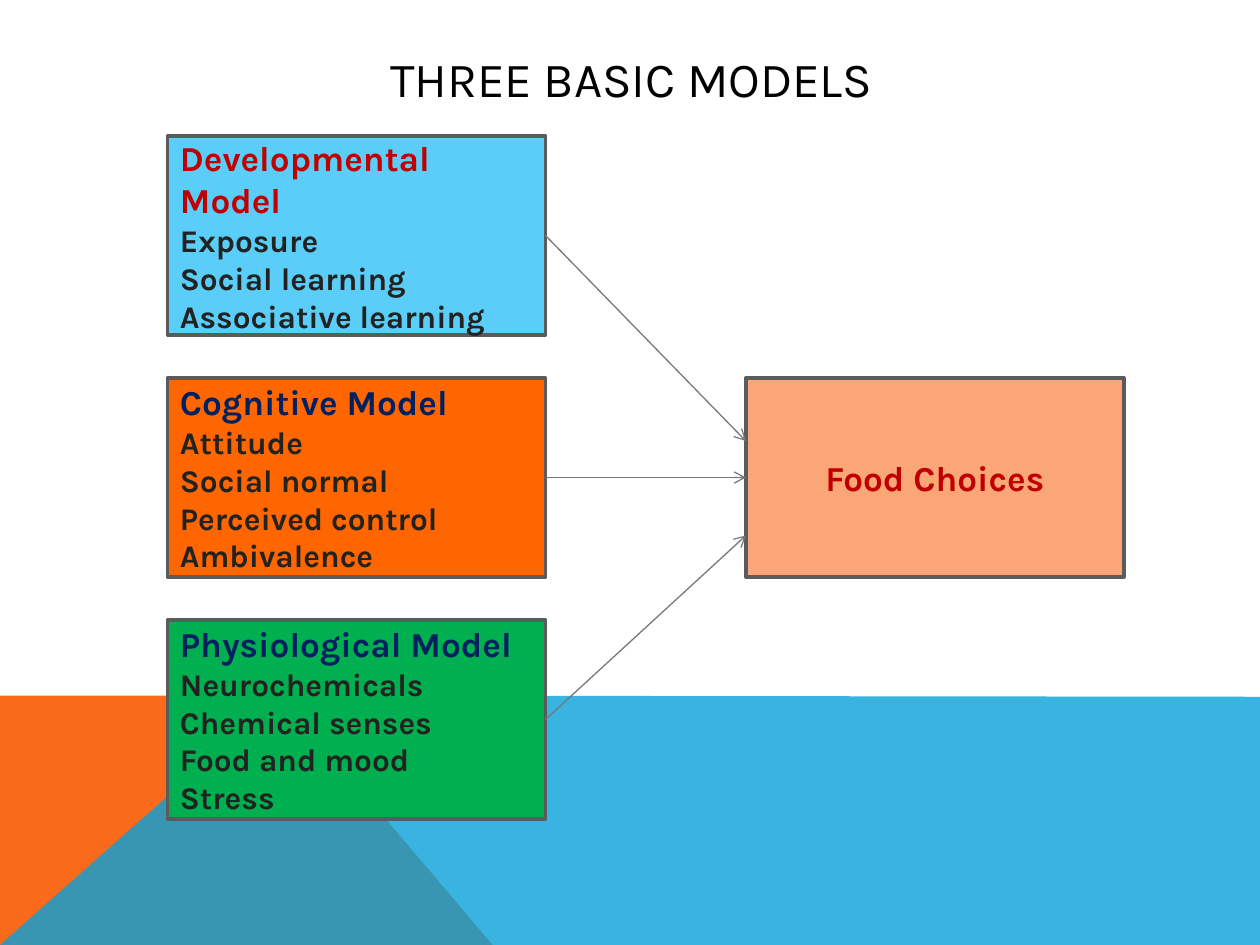
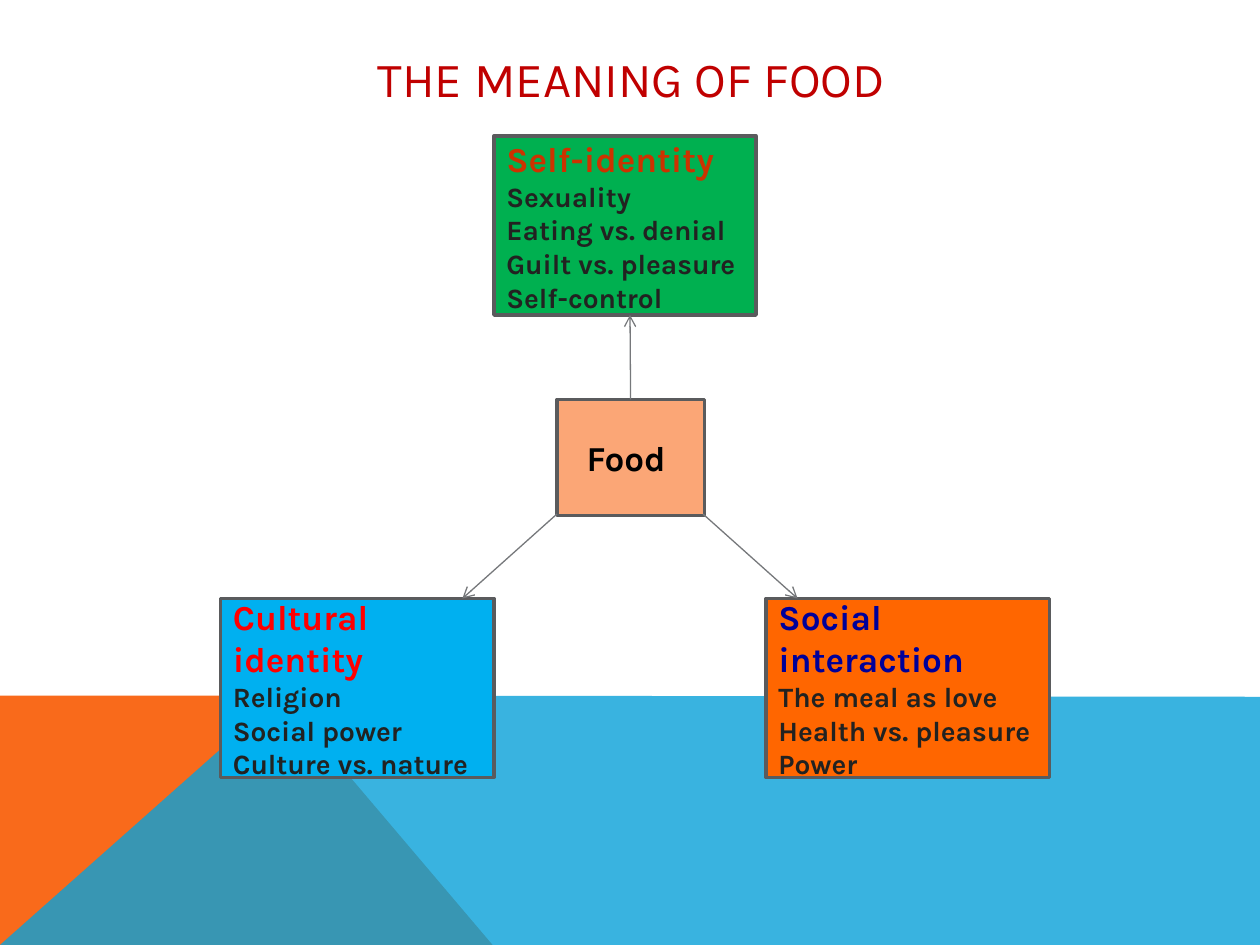
"""Build two slides of linked boxes on food choice and the meaning of food."""
from lxml import etree
from pptx import Presentation
from pptx.dml.color import RGBColor
from pptx.enum.shapes import MSO_CONNECTOR, MSO_SHAPE
from pptx.enum.text import MSO_ANCHOR, PP_ALIGN
from pptx.oxml.ns import qn
from pptx.util import Inches, Pt

RECT = MSO_SHAPE.RECTANGLE
STRAIGHT = MSO_CONNECTOR.STRAIGHT
MIDDLE = MSO_ANCHOR.MIDDLE
LEFT, CENTER = PP_ALIGN.LEFT, PP_ALIGN.CENTER
TOP_SIDE, LEFT_SIDE, RIGHT_SIDE = 0, 1, 3

THEME = {
    "font": "Karla",
    "title_size": 28, "head_size": 20,
    "black": "000000", "body": "222221", "red": "C00000", "navy": "002060",
    "border": "5A5B5D", "arrow": "76787B",
    "green": "00B050", "orange": "FF6600", "peach": "FBA676",
    "border_width": 2, "arrow_width": 0.75,
}

BANDS = [
    ("F96A1B", 100, [(0, 7.5), (0, 5.52), (2.23, 5.52), (3.91, 7.5)]),
    ("08A1D9", 80, [(0, 7.5), (2.23, 5.52), (10, 5.53), (10, 7.5)]),
]
TITLE_AREA = (0.9, 0.33, 8.22, 0.58)

MODELS = [
    ("Developmental Model", "5ACEF9", THEME["red"],
     ["Exposure", "Social learning", "Associative learning"]),
    ("Cognitive Model", THEME["orange"], THEME["navy"],
     ["Attitude", "Social normal", "Perceived control", "Ambivalence"]),
    ("Physiological Model", THEME["green"], THEME["navy"],
     ["Neurochemicals", "Chemical senses", "Food and mood", "Stress"]),
]
MODEL_LEFT, MODEL_TOP, MODEL_STEP = 1.33, 1.08, 1.92
MODEL_SIZE = (3, 1.58)
CHOICES_LEFT = 5.92
CHOICES_ENTRY = [3.5, None, 4.25]

MEANINGS = [
    ("Self-identity", THEME["green"], "CC3300", (3.92, 1.08, 2.08),
     ["Sexuality", "Eating vs. denial", "Guilt vs. pleasure", "Self-control"]),
    ("Social interaction", THEME["orange"], "000099", (6.08, 4.75, 2.25),
     ["The meal as love", "Health vs. pleasure", "Power"]),
    ("Cultural identity", "00B0F0", "FF0000", (1.75, 4.75, 2.17),
     ["Religion", "Social power", "Culture vs. nature"]),
]
MEANING_HEIGHT = 1.42
FOOD_AREA = (4.42, 3.17, 1.17, 0.92)
MEANING_ARROWS = [
    ((5, 3.17), (5, 2.5)),
    ((4.42, 4.08), (3.67, 4.75)),
    ((5.58, 4.08), (6.33, 4.75)),
]


def rgb(color):
    return RGBColor.from_string(color)


def inches(values):
    return [Inches(v) for v in values]


def write(tf, lines, align):
    for name, value in {"word_wrap": True, "vertical_anchor": MIDDLE}.items():
        setattr(tf, name, value)
    for i, (text, size, color, bold) in enumerate(lines):
        p = tf.paragraphs[0] if i == 0 else tf.add_paragraph()
        p.alignment = align
        r = p.add_run()
        r.text = text
        look = {"name": THEME["font"], "size": Pt(size), "bold": bold}
        for name, value in look.items():
            setattr(r.font, name, value)
        r.font.color.rgb = rgb(color)


def add_band(s, color, opacity, points):
    corners = [inches(point) for point in points]
    builder = s.shapes.build_freeform(*corners[0], scale=1.0)
    builder.add_line_segments(corners[1:], close=True)
    sp = builder.convert_to_shape()
    sp.shadow.inherit = False
    sp.line.fill.background()
    sp.fill.solid()
    sp.fill.fore_color.rgb = rgb(color)
    if opacity < 100:
        clr = sp.fill._xPr.find(qn("a:solidFill"))[0]
        etree.SubElement(clr, qn("a:alpha")).set("val", str(opacity * 1000))


def add_slide(prs, title, color):
    s = prs.slides.add_slide(prs.slide_layouts[6])
    for band in BANDS:
        add_band(s, *band)
    sp = s.shapes.add_textbox(*inches(TITLE_AREA))
    write(sp.text_frame, [(title, THEME["title_size"], color, False)], CENTER)
    return s


def add_box(s, area, fill, head, color, items=(), item_size=18):
    sp = s.shapes.add_shape(RECT, *inches(area))
    sp.shadow.inherit = False
    sp.fill.solid()
    sp.fill.fore_color.rgb = rgb(fill)
    sp.line.color.rgb = rgb(THEME["border"])
    sp.line.width = Pt(THEME["border_width"])
    lines = [(head, THEME["head_size"], color, True)]
    lines += [(item, item_size, THEME["body"], True) for item in items]
    write(sp.text_frame, lines, LEFT if items else CENTER)
    return sp


def add_arrow(s, start, end):
    c = s.shapes.add_connector(STRAIGHT, *inches(start + end))
    c.line.color.rgb = rgb(THEME["arrow"])
    c.line.width = Pt(THEME["arrow_width"])
    etree.SubElement(c.line._get_or_add_ln(), qn("a:tailEnd")).set("type", "arrow")
    etree.SubElement(c._element.spPr, qn("a:effectLst"))
    return c


def build_models(prs):
    s = add_slide(prs, "THREE BASIC MODELS", THEME["black"])
    width, height = MODEL_SIZE
    tops = [MODEL_TOP + MODEL_STEP * i for i in range(len(MODELS))]
    boxes = [add_box(s, (MODEL_LEFT, top, width, height), fill, head, color, items)
             for top, (head, fill, color, items) in zip(tops, MODELS)]
    choices = add_box(s, (CHOICES_LEFT, tops[1], width, height),
                      THEME["peach"], "Food Choices", THEME["red"])
    for box, top, entry in zip(boxes, tops, CHOICES_ENTRY):
        middle = top + height / 2
        c = add_arrow(s, (MODEL_LEFT + width, middle), (CHOICES_LEFT, entry or middle))
        c.begin_connect(box, RIGHT_SIDE)
        if entry is None:
            c.end_connect(choices, LEFT_SIDE)


def build_meanings(prs):
    s = add_slide(prs, "THE MEANING OF FOOD", THEME["red"])
    for head, fill, color, place, items in MEANINGS:
        add_box(s, (*place, MEANING_HEIGHT), fill, head, color, items, 16)
    food = add_box(s, FOOD_AREA, THEME["peach"], "Food ", THEME["black"])
    arrows = [add_arrow(s, *ends) for ends in MEANING_ARROWS]
    arrows[0].begin_connect(food, TOP_SIDE)


def main():
    prs = Presentation()
    prs.slide_width, prs.slide_height = inches((10, 7.5))
    build_models(prs)
    build_meanings(prs)
    prs.save("out.pptx")


if __name__ == "__main__":
    main()
